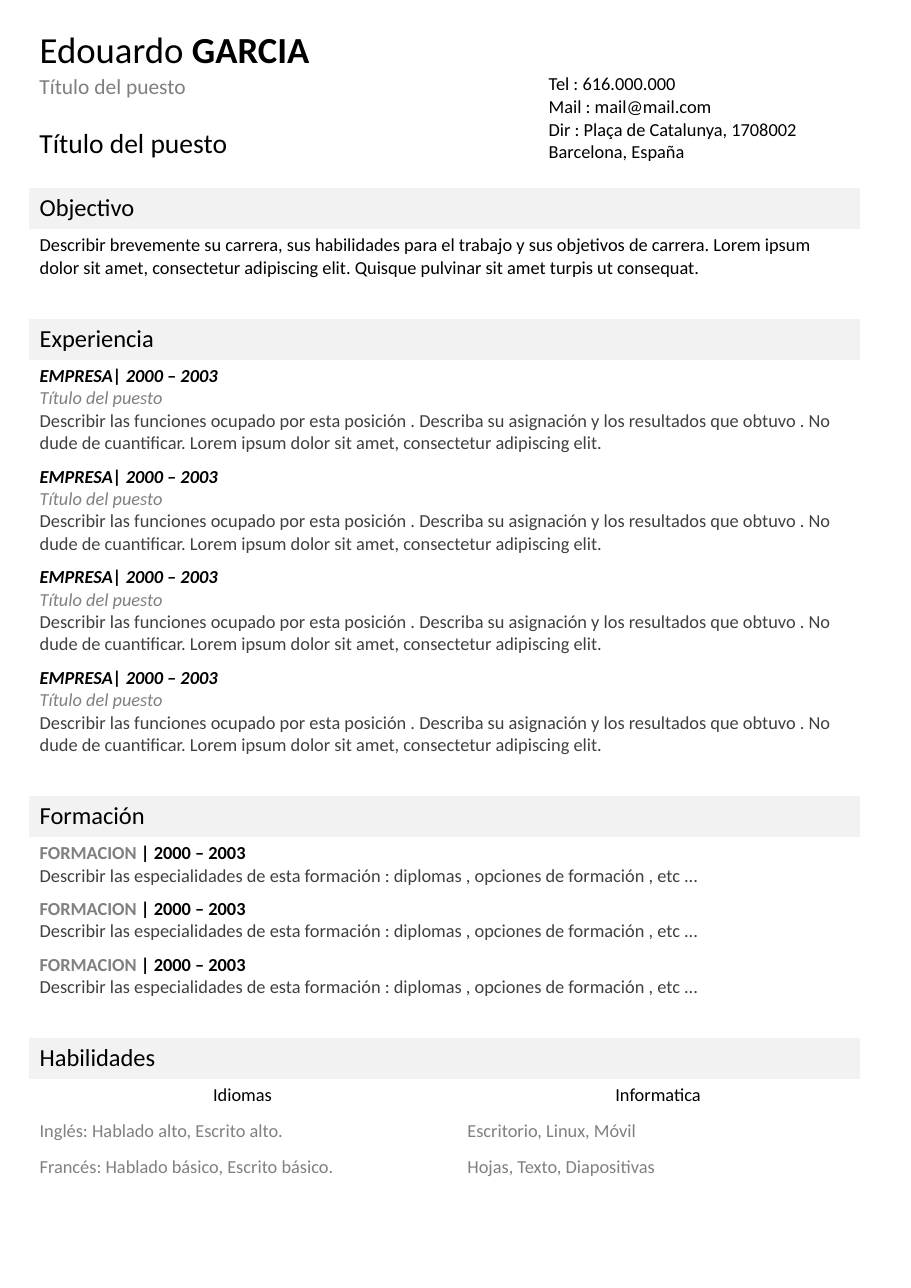
from dataclasses import dataclass

from pptx import Presentation
from pptx.dml.color import RGBColor
from pptx.enum.text import MSO_ANCHOR, MSO_AUTO_SIZE, PP_ALIGN as Align
from pptx.oxml.ns import qn
from pptx.util import Cm, Pt


@dataclass(frozen=True)
class Theme:
    font: str = "Calibri"
    black: str = "000000"
    dark: str = "404040"
    grey: str = "808080"
    light_grey: str = "7F7F7F"
    band: str = "F2F2F2"
    name: int = 24
    role: int = 18
    section: int = 16
    subtitle: int = 14
    body: int = 12


THEME = Theme()
PLAIN_TABLE = "{2D5ABB26-0587-4C30-8999-92F81FD0307C}"
LEFT = 0.66
CONTACT_LEFT = 12.4

# Row heights in centimetres
HEADING, SUMMARY, GAP = 0.94, 1.29, 0.78
JOB, COURSE, SKILL = 2.32, 1.28, 0.82


def run(text, color=THEME.black, size=THEME.body, bold=False, italic=False):
    return text, color, {"name": THEME.font, "size": Pt(size),
                         "bold": bold, "italic": italic}


def write(frame, paragraphs, align=Align.LEFT):
    """Fill a text frame; each paragraph is a list of runs."""
    for index, runs in enumerate(paragraphs):
        paragraph = frame.paragraphs[0] if index == 0 else frame.add_paragraph()
        paragraph.alignment = align
        for text, color, font_format in runs:
            piece = paragraph.add_run()
            piece.text = text
            piece.font.color.rgb = RGBColor.from_string(color)
            for key, value in font_format.items():
                setattr(piece.font, key, value)


def place(shape, left, top, width, height):
    for key, value in {"left": left, "top": top,
                       "width": width, "height": height}.items():
        setattr(shape, key, Cm(value))


def format_frame(frame):
    settings = {"word_wrap": True, "auto_size": MSO_AUTO_SIZE.NONE,
                "vertical_anchor": MSO_ANCHOR.TOP}
    for key, value in settings.items():
        setattr(frame, key, value)


def add_name(slide):
    name = slide.shapes.title
    place(name, LEFT, 0.48, 7.5, 1.27)
    format_frame(name.text_frame)
    write(name.text_frame, [[run("Edouardo ", size=THEME.name),
                             run("GARCIA", size=THEME.name, bold=True)]])


def add_line(slide, left, top, width, height, content):
    line = slide.shapes.add_textbox(Cm(left), Cm(top), Cm(width), Cm(height))
    format_frame(line.text_frame)
    write(line.text_frame, [[content]])


# Each row is (height, cells); a single cell spans both columns
def heading(title):
    return HEADING, [[[run(title, size=THEME.section)]]]


def gap():
    return GAP, [[]]


def job():
    return JOB, [[
        [run("EMPRESA| 2000 – 2003", bold=True, italic=True)],
        [run("Título del puesto", THEME.grey, italic=True)],
        [run("Describir las funciones ocupado por esta posición . Describa su "
             "asignación y los resultados que obtuvo . No dude de cuantificar. "
             "Lorem ipsum dolor sit amet, consectetur adipiscing elit.",
             THEME.dark)],
    ]]


def course():
    return COURSE, [[
        [run("FORMACION ", THEME.grey, bold=True),
         run("| 2000 – 2003", bold=True)],
        [run("Describir las especialidades de esta formación : diplomas , "
             "opciones de formación , etc ...", THEME.dark)],
    ]]


def skills(language, computing, color=THEME.grey):
    return SKILL, [[[run(language, color)]], [[run(computing, color)]]]


def resume_rows():
    summary = ("Describir brevemente su carrera, sus habilidades para el trabajo "
               "y sus objetivos de carrera. Lorem ipsum dolor sit amet, "
               "consectetur adipiscing elit. Quisque pulvinar sit amet turpis "
               "ut consequat.")
    return [
        heading("Objectivo"), (SUMMARY, [[[run(summary)]]]), gap(),
        heading("Experiencia"), *[job() for _ in range(4)], gap(),
        heading("Formación"), *[course() for _ in range(3)], gap(),
        heading("Habilidades"),
        skills("Idiomas", "Informatica", THEME.black),
        skills("Inglés: Hablado alto, Escrito alto.", "Escritorio, Linux, Móvil"),
        skills("Francés: Hablado básico, Escrito básico.",
               "Hojas, Texto, Diapositivas"),
        (SKILL, [[], []]),
    ]


def add_resume_table(slide, rows):
    total = sum(height for height, _ in rows)
    frame = slide.shapes.add_table(len(rows), 2, Cm(LEFT), Cm(4.33),
                                   Cm(19.16), Cm(total))
    table = frame.table
    table.first_row = table.horz_banding = False
    for style in frame.element.iter(qn("a:tableStyleId")):
        style.text = PLAIN_TABLE
    for column, width in zip(table.columns, (9.86, 9.3)):
        column.width = Cm(width)

    for index, (height, contents) in enumerate(rows):
        table.rows[index].height = Cm(height)
        cells = [table.cell(index, column) for column in range(2)]
        if len(contents) == 1:
            cells[0].merge(cells[1])
        for cell in cells:
            if height == HEADING:
                cell.fill.solid()
                cell.fill.fore_color.rgb = RGBColor.from_string(THEME.band)
            else:
                cell.fill.background()
            if not any(contents):
                cell.margin_top = cell.margin_bottom = 0
        for cell, paragraphs in zip(cells, contents):
            is_label = paragraphs and paragraphs[0][0][0] in ("Idiomas", "Informatica")
            write(cell.text_frame, paragraphs,
                  Align.CENTER if is_label else Align.LEFT)


def main():
    deck = Presentation()
    deck.slide_width, deck.slide_height = Cm(21), Cm(29.7)
    slide = deck.slides.add_slide(deck.slide_layouts[5])

    # Name and position
    add_name(slide)
    add_line(slide, LEFT, 1.55, 5, 0.86,
             run("Título del puesto", THEME.light_grey, THEME.subtitle))
    add_line(slide, LEFT, 2.79, 6, 1.02,
             run("Título del puesto", size=THEME.role))

    # Contact details
    contacts = [("Tel : 616.000.000", 1.55, 0.76),
                ("Mail : mail@mail.com", 2.06, 0.76),
                ("Dir : Plaça de Catalunya, 1708002 Barcelona, España", 2.59, 1.27)]
    for text, top, height in contacts:
        add_line(slide, CONTACT_LEFT, top, 7.7, height, run(text))

    # Sections
    add_resume_table(slide, resume_rows())
    deck.save("out.pptx")


if __name__ == "__main__":
    main()
